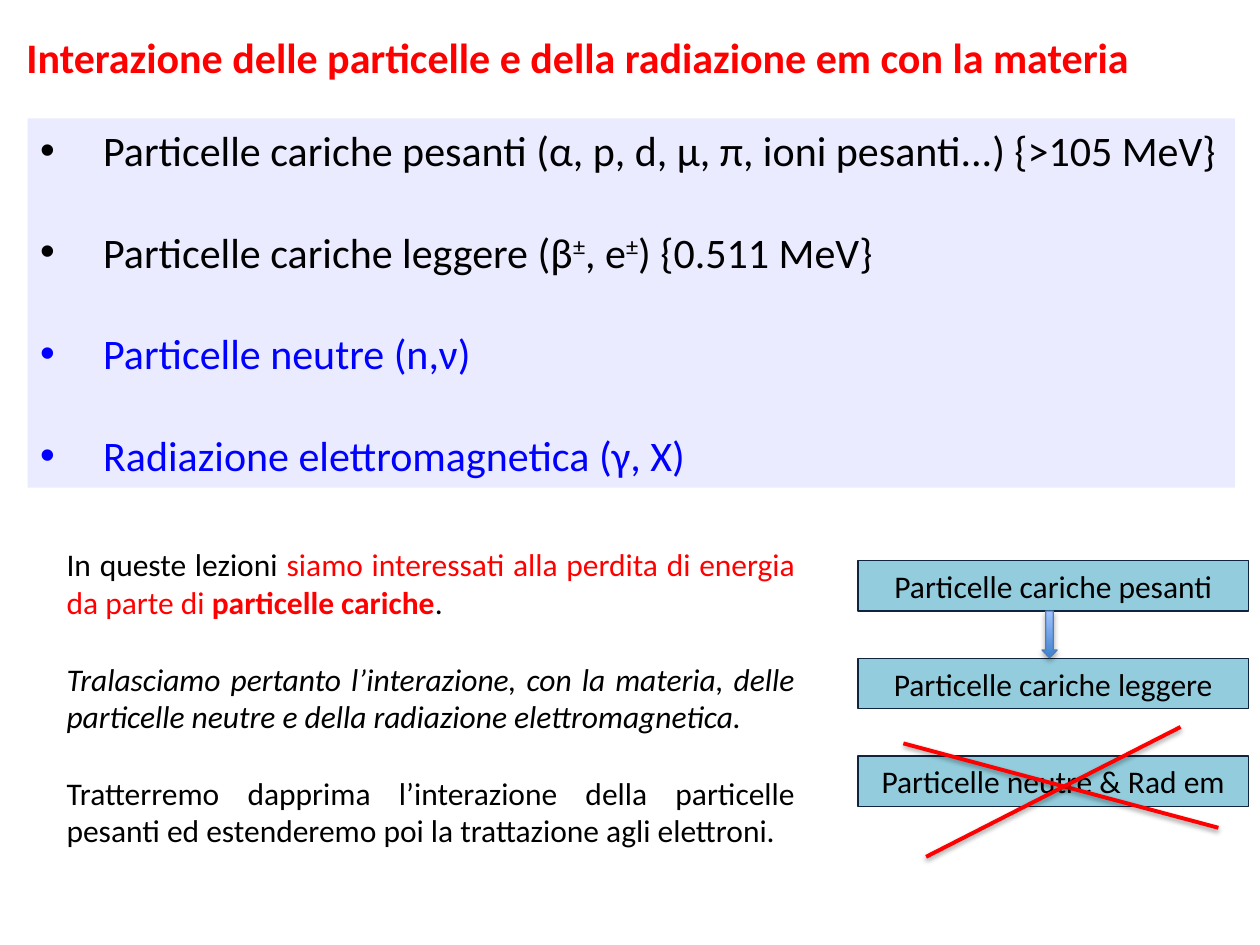
"""Build a slide on how particles and radiation interact with matter."""
from dataclasses import dataclass

from lxml import etree
from pptx import Presentation
from pptx.dml.color import RGBColor
from pptx.enum.shapes import MSO_CONNECTOR, MSO_SHAPE
from pptx.enum.text import MSO_ANCHOR, PP_ALIGN
from pptx.oxml.ns import qn
from pptx.util import Inches, Pt

RECTANGLE, DOWN_ARROW = MSO_SHAPE.RECTANGLE, MSO_SHAPE.DOWN_ARROW
STRAIGHT = MSO_CONNECTOR.STRAIGHT
LEFT, CENTER, JUSTIFY = PP_ALIGN.LEFT, PP_ALIGN.CENTER, PP_ALIGN.JUSTIFY
TOP, MIDDLE = MSO_ANCHOR.TOP, MSO_ANCHOR.MIDDLE

FONT = "Calibri"
COLUMNS, ROWS = 100, 75
BLACK, RED, BLUE = "000000", "FF0000", "0000FF"
LINE_HEIGHT = 1.22


@dataclass(frozen=True)
class Area:
    left: float
    top: float
    width: float
    height: float


@dataclass(frozen=True)
class Span:
    text: str
    color: str = BLACK
    bold: bool = False
    italic: bool = False
    raised: bool = False


@dataclass(frozen=True)
class Stroke:
    start: tuple[float, float]
    end: tuple[float, float]


TITLE = "Interazione delle particelle e della radiazione em con la materia"
PARTICLE_KINDS = [
    [Span("Particelle cariche pesanti (α, p, d, μ, π, ioni pesanti...) {>105 MeV}")],
    [
        Span("Particelle cariche leggere (β"),
        Span("±", raised=True),
        Span(", e"),
        Span("±", raised=True),
        Span(") {0.511 MeV}"),
    ],
    [Span("Particelle neutre (n,ν)", BLUE)],
    [Span("Radiazione elettromagnetica (γ, X)", BLUE)],
]
LESSON_SCOPE = [
    [
        Span("In queste lezioni "),
        Span("siamo interessati alla perdita di energia da parte di ", RED),
        Span("particelle cariche", RED, bold=True),
        Span("."),
    ],
    [Span("Tralasciamo pertanto l’interazione, con la materia, delle particelle "
          "neutre e della radiazione elettromagnetica.", italic=True)],
    [Span("Tratterremo dapprima l’interazione della particelle pesanti ed "
          "estenderemo poi la trattazione agli elettroni.")],
]
STEPS = ["Particelle cariche pesanti", "Particelle cariche leggere", "Particelle neutre & Rad em"]
FIRST_STEP, STEP_PITCH = Area(68.1, 44.5, 31, 4), 7.75
CROSS = [Stroke((71.7, 59), (96.7, 65.7)), Stroke((73.5, 68), (93.7, 57.7))]


def rgb(value: str) -> RGBColor:
    return RGBColor.from_string(value)


def grid(presentation, column: float, row: float) -> tuple[int, int]:
    width, height = presentation.slide_width, presentation.slide_height
    return round(width * column / COLUMNS), round(height * row / ROWS)


def place(presentation, area: Area) -> tuple[int, int, int, int]:
    return grid(presentation, area.left, area.top) + grid(presentation, area.width, area.height)


def style_paragraph(paragraph, size: float, alignment, color: str, bold=False, italic=False):
    paragraph.alignment = alignment
    font = paragraph.font
    font.name, font.size, font.bold, font.italic = FONT, Pt(size), bold, italic
    font.color.rgb = rgb(color)


def add_bullet(paragraph) -> None:
    properties = paragraph._p.get_or_add_pPr()
    properties.set("marL", str(Inches(0.5)))
    properties.set("indent", str(Inches(-0.5)))
    etree.SubElement(properties, qn("a:buFont"), typeface="Arial")
    etree.SubElement(properties, qn("a:buChar"), char="•")


def write_paragraphs(frame, paragraphs: list[list[Span]], size: float, bulleted=False) -> None:
    frame.word_wrap = True
    frame.vertical_anchor = TOP
    for index, spans in enumerate(paragraphs):
        paragraph = frame.add_paragraph() if index else frame.paragraphs[0]
        if index:
            paragraph.space_before = Pt(size * LINE_HEIGHT)
        if bulleted:
            add_bullet(paragraph)
        first = spans[0]
        style_paragraph(paragraph, size, JUSTIFY, first.color, first.bold, first.italic)
        for span in spans:
            run = paragraph.add_run()
            run.text = span.text
            if span.color != first.color:
                run.font.color.rgb = rgb(span.color)
            if span.bold != first.bold:
                run.font.bold = span.bold
            if span.raised:
                run._r.get_or_add_rPr().set("baseline", "30000")


def add_shadow(shape, opacity: int, distance: float) -> None:
    effects = etree.SubElement(shape._element.spPr, qn("a:effectLst"))
    shadow = etree.SubElement(effects, qn("a:outerShdw"), blurRad=str(Pt(3.1)),
                              dist=str(Pt(distance)), dir="5400000", rotWithShape="0")
    color = etree.SubElement(shadow, qn("a:srgbClr"), val=BLACK)
    etree.SubElement(color, qn("a:alpha"), val=str(opacity * 1000))


def add_title(presentation, slide) -> None:
    title = slide.shapes.title
    title.left, title.top, title.width, title.height = place(presentation, Area(1.1, 2, 90.7, 5))
    frame = title.text_frame
    frame.text = TITLE
    frame.word_wrap = False
    frame.vertical_anchor = TOP
    style_paragraph(frame.paragraphs[0], 24, LEFT, RED, bold=True)


def add_panel(presentation, slide, area: Area, fill: str):
    panel = slide.shapes.add_shape(RECTANGLE, *place(presentation, area))
    panel.shadow.inherit = False
    panel.fill.solid()
    panel.fill.fore_color.rgb = rgb(fill)
    panel.line.fill.background()
    return panel


def add_step(presentation, slide, text: str, index: int) -> None:
    first = FIRST_STEP
    area = Area(first.left, first.top + index * STEP_PITCH, first.width, first.height)
    step = add_panel(presentation, slide, area, "93CDDD")
    step.line.color.rgb = rgb("0F243E")
    step.line.width = Pt(0.75)
    frame = step.text_frame
    frame.text = text
    frame.vertical_anchor = MIDDLE
    style_paragraph(frame.paragraphs[0], 18, CENTER, BLACK)


def add_arrow(presentation, slide, area: Area) -> None:
    arrow = slide.shapes.add_shape(DOWN_ARROW, *place(presentation, area))
    arrow.fill.gradient()
    arrow.fill.gradient_angle = 90
    for stop, color, position in zip(arrow.fill.gradient_stops, ("3F80CE", "A4C4FF"), (0, 1)):
        stop.color.rgb = rgb(color)
        stop.position = position
    arrow.line.color.rgb = rgb("4B7EBC")
    arrow.line.width = Pt(0.75)
    add_shadow(arrow, 35, 1.8)


def add_stroke(presentation, slide, stroke: Stroke) -> None:
    ends = grid(presentation, *stroke.start) + grid(presentation, *stroke.end)
    line = slide.shapes.add_connector(STRAIGHT, *ends)
    line.line.color.rgb = rgb(RED)
    line.line.width = Pt(2.25)
    add_shadow(line, 38, 1.6)


def main() -> None:
    presentation = Presentation()
    presentation.slide_width, presentation.slide_height = Inches(10), Inches(7.5)
    slide = presentation.slides.add_slide(presentation.slide_layouts[5])
    add_title(presentation, slide)
    kinds = add_panel(presentation, slide, Area(2.2, 9.4, 95.8, 29.3), "EBEBFF")
    write_paragraphs(kinds.text_frame, PARTICLE_KINDS, 24, bulleted=True)
    scope = slide.shapes.add_textbox(*place(presentation, Area(4.3, 42.8, 59.8, 25.2)))
    write_paragraphs(scope.text_frame, LESSON_SCOPE, 18)
    for index, text in enumerate(STEPS):
        add_step(presentation, slide, text, index)
    add_arrow(presentation, slide, Area(82.7, 48.5, 1.2, 3.7))
    for stroke in CROSS:
        add_stroke(presentation, slide, stroke)
    presentation.save("out.pptx")


if __name__ == "__main__":
    main()
